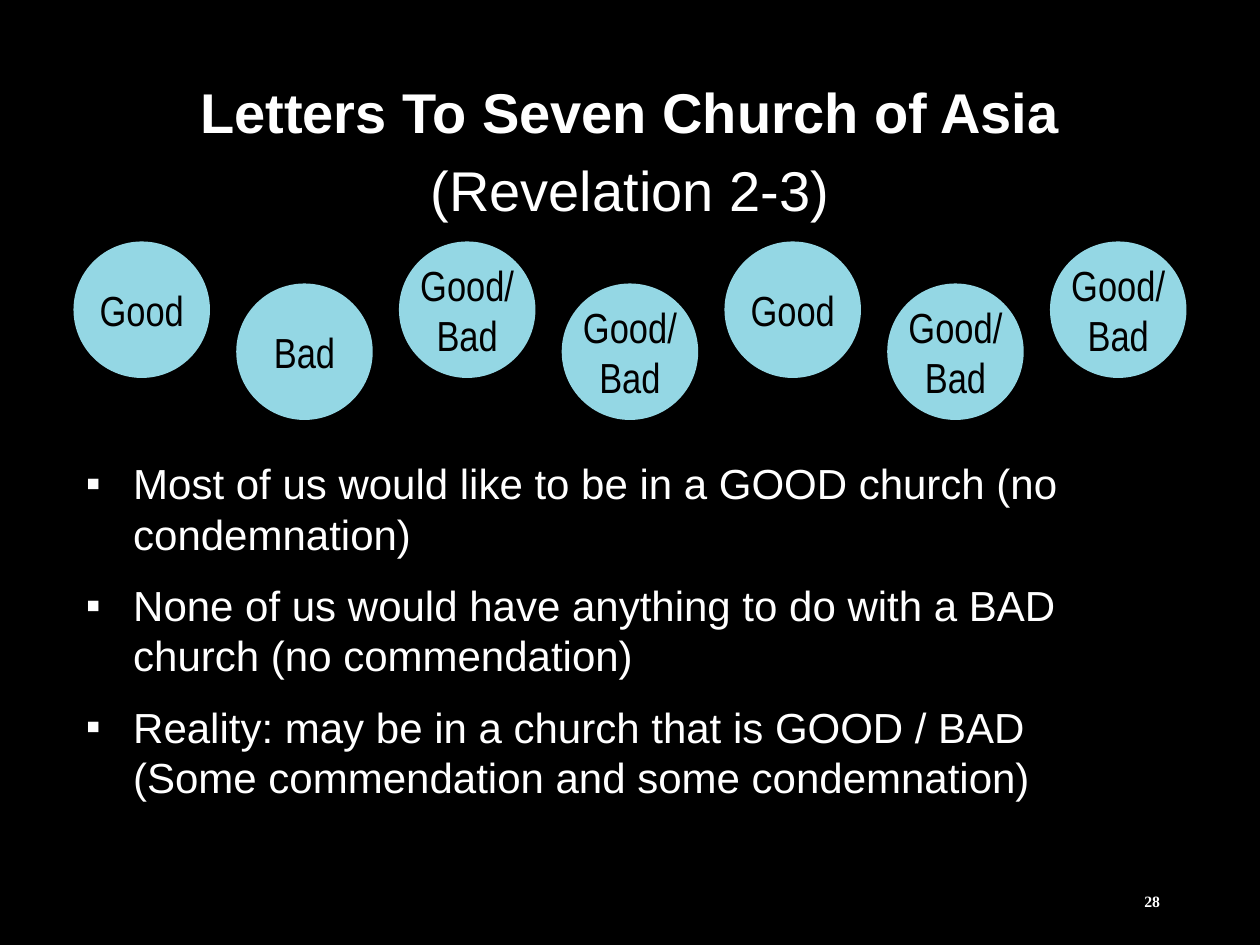
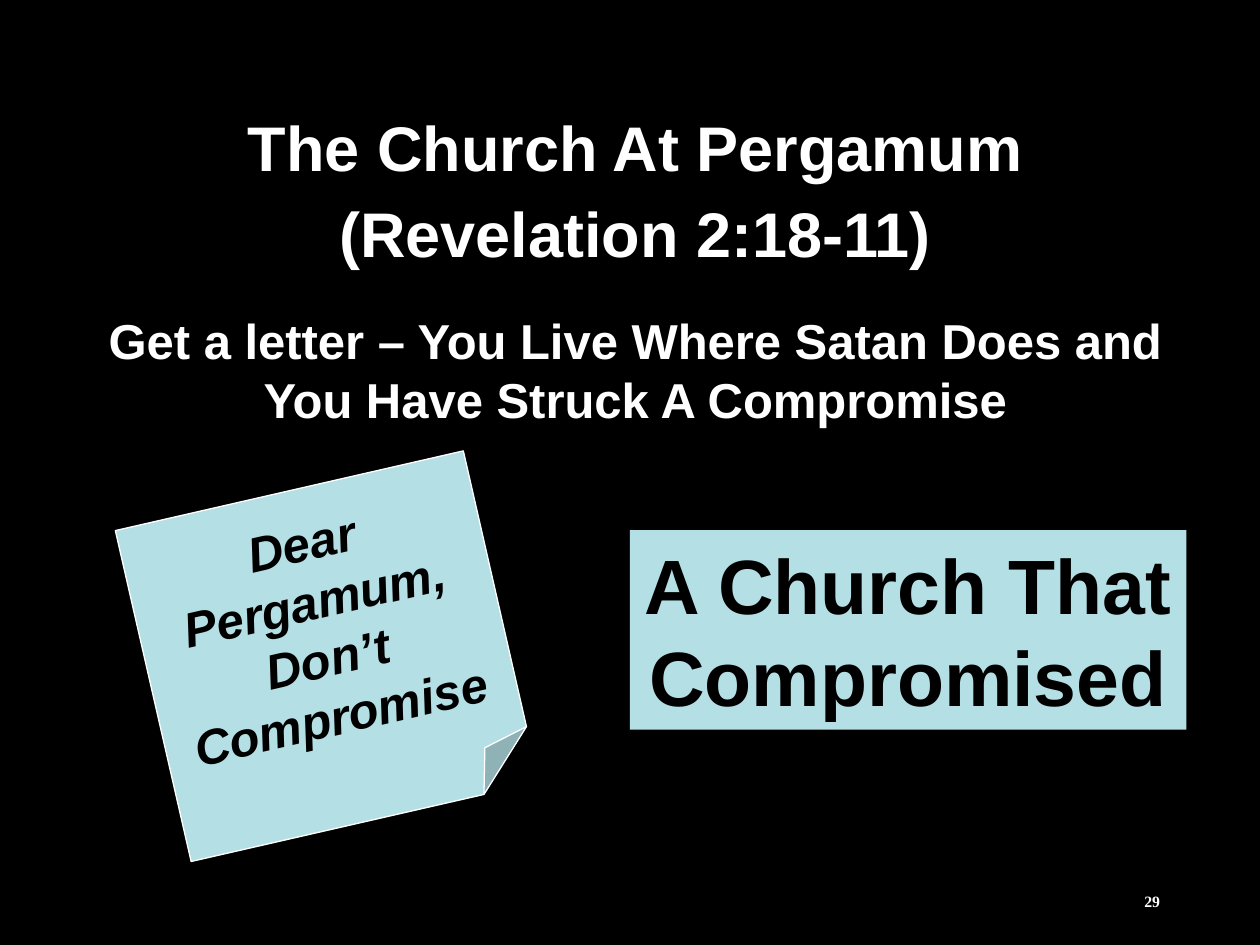
"""Build two slides about the letters to the churches of Asia."""
from dataclasses import dataclass

import lxml.etree
import pptx
import pptx.dml.color
import pptx.enum.shapes
import pptx.enum.text
import pptx.oxml.ns
import pptx.util

Pt = pptx.util.Pt
Align = pptx.enum.text.PP_ALIGN
Anchor = pptx.enum.text.MSO_ANCHOR
Preset = pptx.enum.shapes.MSO_SHAPE

COLORS = {
    "background": "000000",
    "light": "FFFFFF",
    "dark": "000000",
    "circle": "94D7E4",
    "paper": "B3DFE5",
}
BODY_INDENT = 27
CIRCLE_SIZE, CIRCLE_PITCH, CIRCLE_LEFT = 78, 93, 42
CIRCLE_TOPS = (138, 162)


@dataclass(frozen=True)
class Area:
    left: float
    top: float
    width: float
    height: float

    def lengths(self) -> list:
        return [Pt(value) for value in (self.left, self.top, self.width, self.height)]


@dataclass(frozen=True)
class Panel:
    area: Area
    preset: Preset
    fill: str
    outline: str | None = None
    rotation: float = 0


VERDICTS = ("Good", "Bad", "Good/\nBad", "Good/\nBad", "Good", "Good/\nBad", "Good/\nBad")
LESSONS = (
    "Most of us would like to be in a GOOD church (no condemnation)\n"
    "None of us would have anything to do with a BAD church (no commendation)\n"
    "Reality: may be in a church that is GOOD / BAD\v"
    "(Some commendation and some condemnation)"
)
NUMBER_AREA = Area(508, 500.4, 162, 28.8)
LETTER = Panel(Area(85, 278, 204, 194), Preset.FOLDED_CORNER, "paper", "light", 347.1)
SUMMARY = Panel(Area(360, 303, 318, 114), Preset.RECTANGLE, "paper")


def color(name: str) -> pptx.dml.color.RGBColor:
    return pptx.dml.color.RGBColor.from_string(COLORS[name])


def add_bullet(para) -> None:
    properties = para._p.get_or_add_pPr()
    properties.set("marL", str(Pt(BODY_INDENT)))
    properties.set("indent", str(-Pt(BODY_INDENT)))
    qualified = pptx.oxml.ns.qn
    bullet_color = lxml.etree.SubElement(properties, qualified("a:buClr"))
    lxml.etree.SubElement(bullet_color, qualified("a:srgbClr"), val=COLORS["light"])
    lxml.etree.SubElement(properties, qualified("a:buFont"), typeface="Arial")
    lxml.etree.SubElement(properties, qualified("a:buChar"), char="▪")


def write(box, text: str, *, size: float, ink: str = "light", font: str = "Arial",
          bold: bool = True, italic: bool = False, align: Align = Align.CENTER,
          anchor: Anchor = Anchor.TOP, wrap: bool = True, gap: float = 0,
          bullets: bool = False, plain_after_first: bool = False) -> None:
    frame = box.text_frame
    frame.word_wrap = wrap
    frame.vertical_anchor = anchor
    frame.text = text
    for index, para in enumerate(frame.paragraphs):
        para.alignment = align
        para.space_before = Pt(gap if index else 0)
        if bullets:
            add_bullet(para)
        for span in para.runs:
            span.font.size = Pt(size)
            span.font.name = font
            span.font.bold = bold and not (plain_after_first and index)
            span.font.italic = italic
            span.font.color.rgb = color(ink)


def add_text(page, area: Area, text: str, **style) -> None:
    write(page.shapes.add_textbox(*area.lengths()), text, **style)


def add_panel(page, panel: Panel, text: str, **style) -> None:
    shape = page.shapes.add_shape(panel.preset, *panel.area.lengths())
    shape.shadow.inherit = False
    shape.rotation = panel.rotation
    shape.fill.solid()
    shape.fill.fore_color.rgb = color(panel.fill)
    if panel.outline:
        shape.line.color.rgb = color(panel.outline)
        shape.line.width = Pt(0.75)
    else:
        shape.line.fill.background()
    write(shape, text, ink="dark", anchor=Anchor.MIDDLE, **style)


def add_page(deck, number: int):
    page = deck.slides.add_slide(deck.slide_layouts[6])
    page.background.fill.solid()
    page.background.fill.fore_color.rgb = color("background")
    add_text(page, NUMBER_AREA, str(number), size=9, font="Times New Roman",
             align=Align.RIGHT, anchor=Anchor.MIDDLE)
    return page


def build_seven_churches(deck) -> None:
    page = add_page(deck, 28)
    for index, verdict in enumerate(VERDICTS):
        area = Area(CIRCLE_LEFT + index * CIRCLE_PITCH, CIRCLE_TOPS[index % 2],
                    CIRCLE_SIZE, CIRCLE_SIZE)
        add_panel(page, Panel(area, Preset.OVAL, "circle"), verdict,
                  size=24, font="Arial Narrow", bold=False, wrap=False)
    add_text(page, Area(42, 258, 630, 211), LESSONS, size=24, bold=False,
             align=Align.LEFT, gap=12, bullets=True)
    add_text(page, Area(42, 41, 636, 91),
             "Letters To Seven Church of Asia\n(Revelation 2-3)",
             size=32, gap=6, plain_after_first=True)


def build_pergamum(deck) -> None:
    page = add_page(deck, 29)
    add_text(page, Area(48, 58.5, 630, 101),
             "The Church At Pergamum\n(Revelation 2:18-11)", size=36, gap=6)
    add_text(page, Area(48, 174, 630, 75),
             "Get a letter – You Live Where Satan Does and You Have Struck A Compromise",
             size=28)
    add_panel(page, SUMMARY, "A Church That Compromised", size=44)
    add_panel(page, LETTER, "Dear Pergamum,\nDon’t Compromise", size=28, italic=True)


def main() -> None:
    deck = pptx.Presentation()
    deck.slide_width, deck.slide_height = Pt(720), Pt(540)
    build_seven_churches(deck)
    build_pergamum(deck)
    deck.save("out.pptx")


if __name__ == "__main__":
    main()
